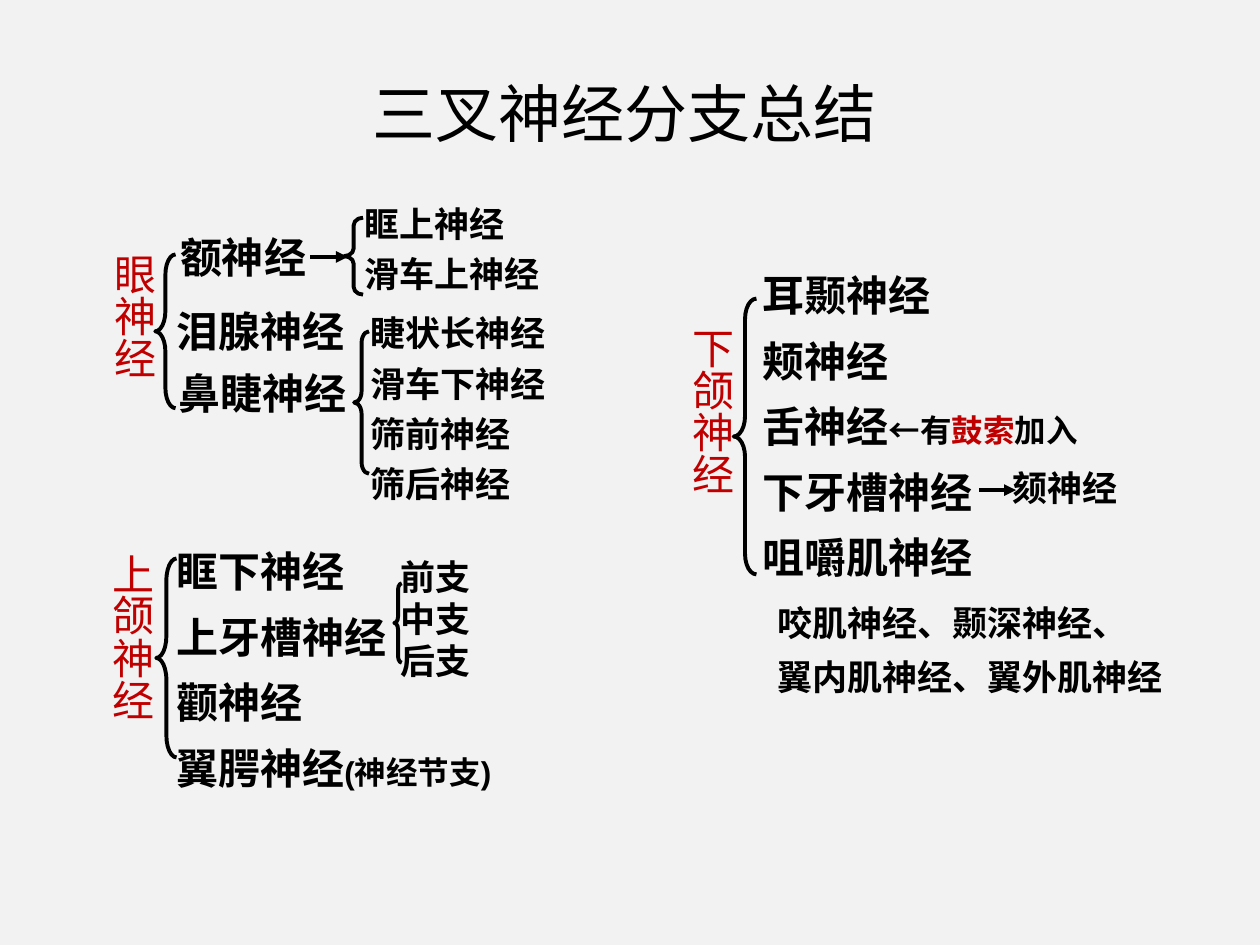
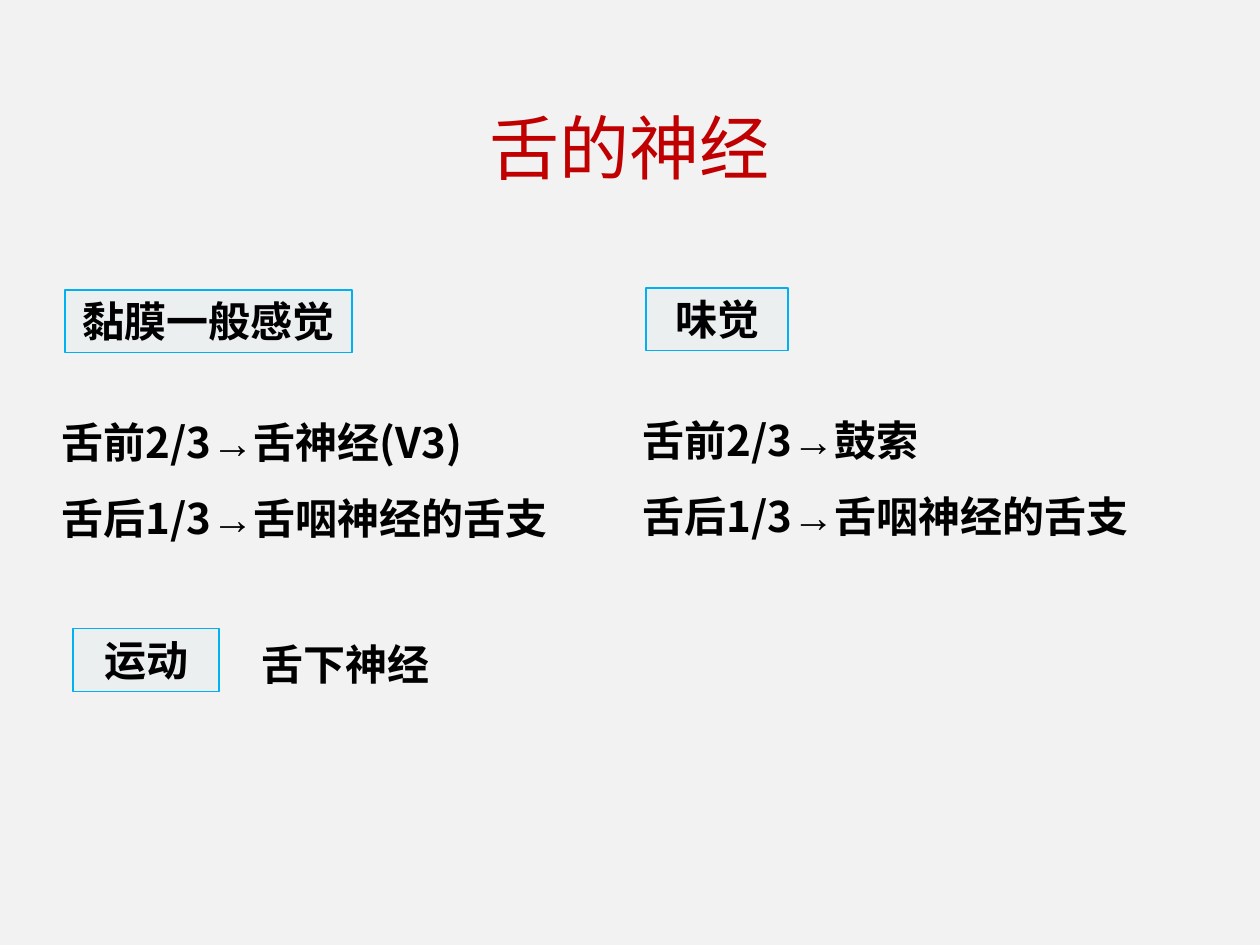
import pptx
import pptx.util
import pptx.dml.color
import pptx.enum.shapes
import pptx.enum.text
import pptx.oxml
import pptx.oxml.ns
from dataclasses import dataclass

Cm, Pt = pptx.util.Cm, pptx.util.Pt
SHAPE = pptx.enum.shapes.MSO_SHAPE
ALIGN = pptx.enum.text.PP_ALIGN
ANCHOR = pptx.enum.text.MSO_ANCHOR
qn = pptx.oxml.ns.qn


@dataclass(frozen=True)
class Theme:
    font: str = "Noto Sans CJK SC"
    symbol_font: str = "Arial"
    background: str = "F2F2F2"
    ink: str = "000000"
    accent: str = "C00000"
    label_fill: str = "EBEFF0"
    label_line: str = "00B0F0"
    title: int = 36
    big_title: int = 40
    main: int = 24
    sub: int = 20
    note: int = 18
    stroke: float = 2.25


T = Theme()


# Shared helpers
def rgb(value):
    return pptx.dml.color.RGBColor.from_string(value)


def add_child(parent, tag, **attrs):
    child = parent.makeelement(qn(tag), attrs)
    parent.append(child)
    return child


def place(sp, box, dx, dy, w, h):
    """Put a shape at an offset from the corner of a region."""
    sp.left, sp.top = Cm(box[0] + dx), Cm(box[1] + dy)
    sp.width, sp.height = Cm(w), Cm(h)
    return sp


def write(sp, paragraphs, size=T.main, color=T.ink, bold=True, align=ALIGN.LEFT,
          spacing=1.0, anchor=ANCHOR.TOP, vertical=False):
    """Each paragraph is a string or a list of (text, run format) pairs."""
    tf = sp.text_frame
    tf.word_wrap = True
    tf.auto_size = pptx.enum.text.MSO_AUTO_SIZE.NONE
    tf.vertical_anchor = anchor
    if vertical:
        tf._txBody.bodyPr.set("vert", "eaVert")
    for i, runs in enumerate(paragraphs):
        p = tf.paragraphs[0] if i == 0 else tf.add_paragraph()
        p.alignment, p.line_spacing = align, spacing
        p.space_before = p.space_after = Pt(0)
        pPr = p._p.get_or_add_pPr()
        pPr.set("marL", "0")
        pPr.set("indent", "0")
        add_child(pPr, "a:buNone")
        for text, fmt in [(runs, {})] if isinstance(runs, str) else runs:
            r = p.add_run()
            r.text = text
            r.font.size = Pt(fmt.get("size", size))
            r.font.bold = bold
            r.font.color.rgb = rgb(fmt.get("color", color))
            r.font.name = fmt.get("font", T.font)
            add_child(r._r.get_or_add_rPr(), "a:ea", typeface=r.font.name)


def text(s, box, area, paragraphs, **fmt):
    sp = place(s.shapes.add_textbox(0, 0, 0, 0), box, *area)
    write(sp, paragraphs, **fmt)


def fill_body(s, idx, box, area, paragraphs, **fmt):
    write(place(s.placeholders[idx], box, *area), paragraphs, **fmt)


def brace(s, box, area, curve):
    sp = place(s.shapes.add_shape(SHAPE.LEFT_BRACE, 0, 0, 0, 0), box, *area)
    sp.shadow.inherit = False
    sp.fill.background()
    sp.line.color.rgb, sp.line.width = rgb(T.ink), Pt(T.stroke)
    sp.adjustments[0] = curve


def arrow(s, box, dx, dy, length):
    x, y = Cm(box[0] + dx), Cm(box[1] + dy)
    line = s.shapes.add_connector(
        pptx.enum.shapes.MSO_CONNECTOR.STRAIGHT, x, y, x + Cm(length), y)
    line.line.color.rgb, line.line.width = rgb(T.ink), Pt(T.stroke)
    add_child(line.line._get_or_add_ln(), "a:tailEnd", type="triangle")
    add_child(line._element.spPr, "a:effectLst")


def label(s, box, dx, w, caption):
    sp = place(s.shapes.add_shape(SHAPE.RECTANGLE, 0, 0, 0, 0), box, dx, 0, w, 1.27)
    sp.shadow.inherit = False
    sp.fill.solid()
    sp.fill.fore_color.rgb = rgb(T.label_fill)
    sp.line.color.rgb, sp.line.width = rgb(T.label_line), Pt(1)
    write(sp, [caption], align=ALIGN.CENTER)


def new_slide(prs, title, area, **fmt):
    s = prs.slides.add_slide(prs.slide_layouts.get_by_name("Two Content"))
    s.background.fill.solid()
    s.background.fill.fore_color.rgb = rgb(T.background)
    write(place(s.shapes.title, (0, 0), *area), [title], bold=False, **fmt)
    return s


def root(s, box, dy, h, name):
    """Vertical name of the nerve a tree starts from."""
    text(s, box, (0, dy, 1.55, h), [name], color=T.accent, bold=False, vertical=True)


# Slide 1: one tree for each division
def ophthalmic_tree(s, box):
    root(s, box, 1.09, 4.37, "眼神经")
    brace(s, box, (1.35, 1.35, 0.41, 3.1), 1)
    for name, dx, dy in (("额神经", 1.6, 0.76), ("泪腺神经", 1.52, 2.26),
                         ("鼻睫神经", 1.57, 3.51)):
        text(s, box, (dx, dy, 5, 1.27), [name])
    arrow(s, box, 4.47, 1.4, 0.76)
    brace(s, box, (5.16, 0.61, 0.38, 1.55), 0.41)
    text(s, box, (5.31, 0, 4.57, 2.31), ["眶上神经", "滑车上神经"],
         size=T.sub, spacing=1.2)
    brace(s, box, (5.36, 2.9, 0.3, 2.87), 0.77)
    text(s, box, (5.44, 2.21, 4.95, 4.22),
         ["睫状长神经", "滑车下神经", "筛前神经", "筛后神经"],
         size=T.sub, spacing=1.2)


def maxillary_tree(s, box):
    root(s, box, 0.33, 5.41, "上颌神经")
    brace(s, box, (1.4, 0.69, 0.41, 4.01), 1.08)
    note, sign = {"size": T.note}, {"size": T.note, "font": T.symbol_font}
    fill_body(s, 1, box, (1.55, 0, 7.8, 5.41),
              ["眶下神经", "上牙槽神经", "颧神经",
               [("翼腭神经", {}), ("(", sign), ("神经节支", note), (")", sign)]],
              spacing=1.3)
    brace(s, box, (6.2, 1.19, 0.15, 1.6), 0.85)
    text(s, box, (6.07, 0.51, 2.64, 2.79), ["前支", "中支", "后支"], size=T.sub)


def mandibular_tree(s, box):
    root(s, box, 1.32, 5.66, "下颌神经")
    brace(s, box, (1.35, 0.99, 0.46, 5.56), 0.89)
    note = {"size": T.note}
    fill_body(s, 2, box, (1.68, 0, 7.85, 6.81),
              ["耳颞神经", "颊神经",
               [("舌神经", {}), ("←有", note),
                ("鼓索", {"size": T.note, "color": T.accent}), ("加入", note)],
               "下牙槽神经", "咀嚼肌神经"],
              spacing=1.3, anchor=ANCHOR.MIDDLE)
    arrow(s, box, 6.3, 4.85, 0.74)
    text(s, box, (6.73, 4.24, 3.73, 1.12), ["颏神经"], size=T.sub)
    text(s, box, (1.98, 6.71, 8.64, 2.36),
         ["咬肌神经、颞深神经、", "翼内肌神经、翼外肌神经"], size=T.sub, spacing=1.3)


def branches_slide(prs):
    s = new_slide(prs, "三叉神经分支总结", (7.26, 1.37, 12.6, 1.8), size=T.title)
    ophthalmic_tree(s, (1.78, 3.78))
    maxillary_tree(s, (1.75, 10.57))
    mandibular_tree(s, (13.44, 5.03))


# Slide 2: sensation, taste and movement of the tongue
def sense_column(s, idx, box, caption, label_width, front_nerve):
    label(s, box, 0.32, label_width, caption)
    supply = (("舌前2/3", front_nerve), ("舌后1/3", "舌咽神经的舌支"))
    fill_body(s, idx, box, (0, 1.93, 11.8, 3.15),
              [[(part, {}), ("→", {"font": T.symbol_font}), (nerve, {})]
               for part, nerve in supply], spacing=1.5)


def motor_row(s, box):
    label(s, box, 0, 2.95, "运动")
    text(s, box, (3.56, 0.08, 7.57, 1.27), ["舌下神经"])


def tongue_slide(prs):
    s = new_slide(prs, "舌的神经", (8.99, 1.98, 7.39, 1.96), size=T.big_title,
                  color=T.accent, align=ALIGN.CENTER)
    sense_column(s, 1, (0.99, 5.84), "黏膜一般感觉", 5.79, "舌神经(V3)")
    sense_column(s, 2, (12.7, 5.8), "味觉", 2.87, "鼓索")
    motor_row(s, (1.47, 12.67))


def main():
    prs = pptx.Presentation()
    prs.slide_width, prs.slide_height = Cm(25.4), Cm(19.05)
    branches_slide(prs)
    tongue_slide(prs)
    prs.save("out.pptx")


if __name__ == "__main__":
    main()
